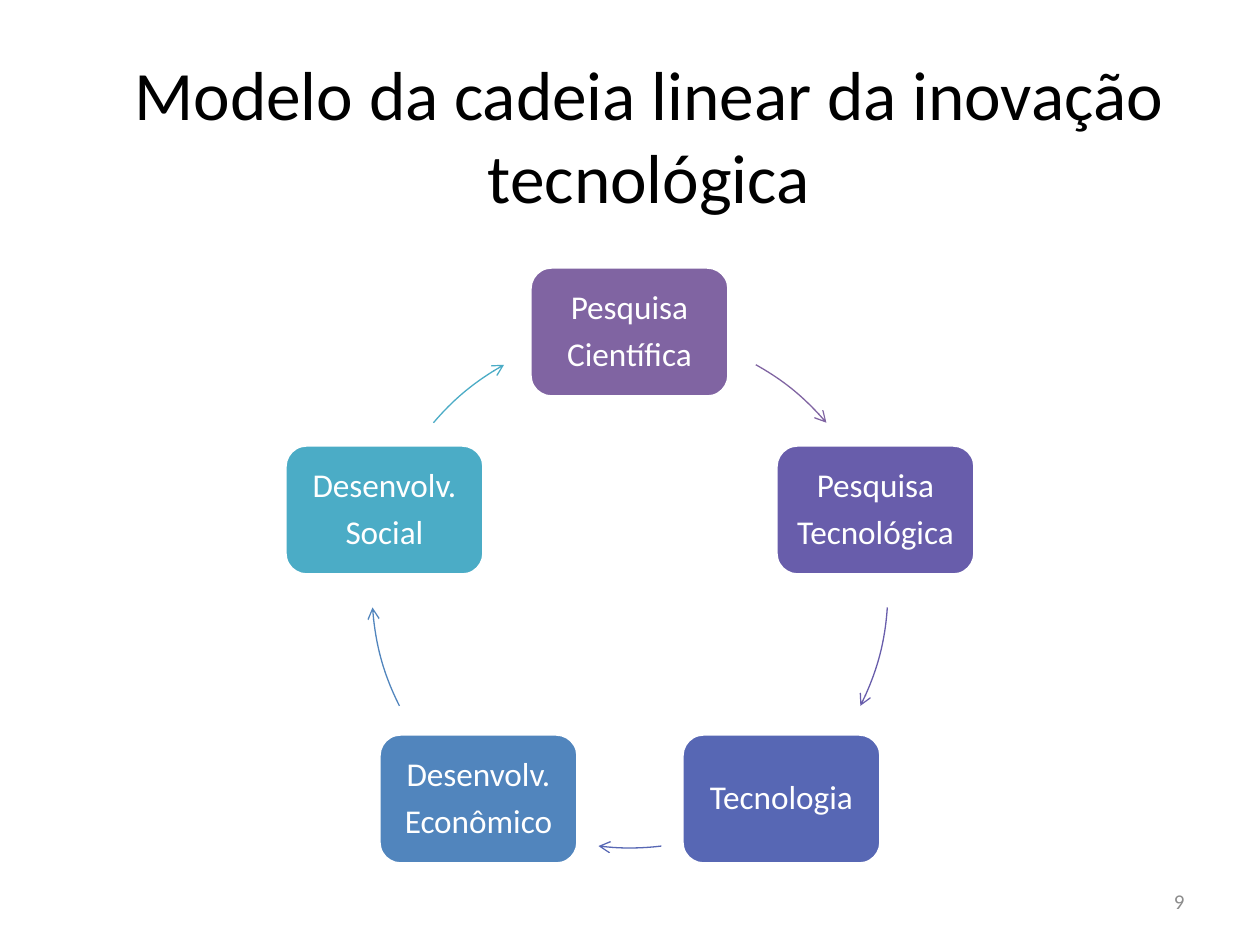
from math import cos, radians, sin

from lxml.etree import SubElement
from pptx import Presentation
from pptx.dml.color import RGBColor
from pptx.enum.shapes import MSO_SHAPE as Shape
from pptx.enum.text import MSO_ANCHOR as Anchor, MSO_AUTO_SIZE as AutoSize, PP_ALIGN as Align
from pptx.oxml.ns import qn
from pptx.util import Emu, Pt

EMU_PER_PX = 914400 // 126
CENTER_X, CENTER_Y, RADIUS = 630, 590, 258
BOX_WIDTH, BOX_HEIGHT = 199, 130
STAGES = [
    (["Pesquisa", "Científica"], "8064A2", (299.2, 319.6)),
    (["Pesquisa", "Tecnológica"], "685DAB", (3.9, 26.7)),
    (["Tecnologia"], "5767B4", (83, 97)),
    (["Desenvolv.", "Econômico"], "5185BD", (153.3, 176.1)),
    (["Desenvolv.", "Social"], "4BACC6", (220.4, 240.8)),
]


def px(*lengths):
    """Turn pixel lengths into EMU."""
    return [Emu(round(length) * EMU_PER_PX) for length in lengths]


def color(hex_string):
    """Turn a hex string into a colour."""
    return RGBColor.from_string(hex_string)


def write(shape, lines, size, hex_string, align=Align.CENTER):
    """Fill a shape with one paragraph per line and format it."""
    frame = shape.text_frame
    frame.text = "\n".join(lines)
    frame.word_wrap = True
    frame.auto_size = AutoSize.NONE
    frame.vertical_anchor = Anchor.MIDDLE
    for paragraph in frame.paragraphs:
        paragraph.alignment = align
        for run in paragraph.runs:
            run.font.name = "Calibri"
            run.font.size = Pt(size)
            run.font.color.rgb = color(hex_string)
    return frame


def add_title(slide, text):
    """Place and format the title placeholder."""
    title = slide.shapes.title
    title.left, title.top, title.width, title.height = px(82, 55, 1134, 158)
    write(title, [text], 39.6, "000000")


def add_page_number(slide, number):
    """Add the page number at the bottom right."""
    box = slide.shapes.add_textbox(*px(903, 876, 294, 50))
    write(box, [number], 12, "8C8C8C", Align.RIGHT)


def add_stage(slide, lines, fill, angle):
    """Add a rounded box centred on the cycle at an angle."""
    left = CENTER_X + RADIUS * cos(radians(angle)) - BOX_WIDTH / 2
    top = CENTER_Y + RADIUS * sin(radians(angle)) - BOX_HEIGHT / 2
    box = slide.shapes.add_shape(
        Shape.ROUNDED_RECTANGLE, *px(left, top, BOX_WIDTH, BOX_HEIGHT))
    box.shadow.inherit = False
    box.fill.solid()
    box.fill.fore_color.rgb = color(fill)
    box.line.color.rgb = color("FFFFFF")
    box.line.width = Pt(2)
    frame = write(box, lines, 19, "FFFFFF")
    inset, = px(10)
    frame.margin_left = frame.margin_right = inset
    frame.margin_top = frame.margin_bottom = inset
    for paragraph in frame.paragraphs:
        paragraph.line_spacing = 0.9
        paragraph.space_after = Pt(6.5)


def add_arrow(slide, stroke, angles):
    """Add a clockwise arc of the cycle with an arrowhead at its end."""
    arc = slide.shapes.add_shape(
        Shape.ARC, *px(CENTER_X - RADIUS, CENTER_Y - RADIUS, 2 * RADIUS, 2 * RADIUS))
    for index, angle in enumerate(angles):
        arc.adjustments[index] = angle * 0.6
    arc.shadow.inherit = False
    arc.fill.background()
    arc.line.color.rgb = color(stroke)
    arc.line.width = Pt(0.75)
    SubElement(arc.line._get_or_add_ln(), qn("a:tailEnd"), type="arrow")


def main():
    """Build and save the slide."""
    presentation = Presentation()
    presentation.slide_width, presentation.slide_height = px(1260, 945)
    slide = presentation.slides.add_slide(presentation.slide_layouts[5])
    add_title(slide, "Modelo da cadeia linear da inovação tecnológica")
    add_page_number(slide, "9")
    step = 360 / len(STAGES)
    for index, (lines, hex_string, angles) in enumerate(STAGES):
        add_stage(slide, lines, hex_string, index * step - 90)
        add_arrow(slide, hex_string, angles)
    presentation.save("out.pptx")


if __name__ == "__main__":
    main()
